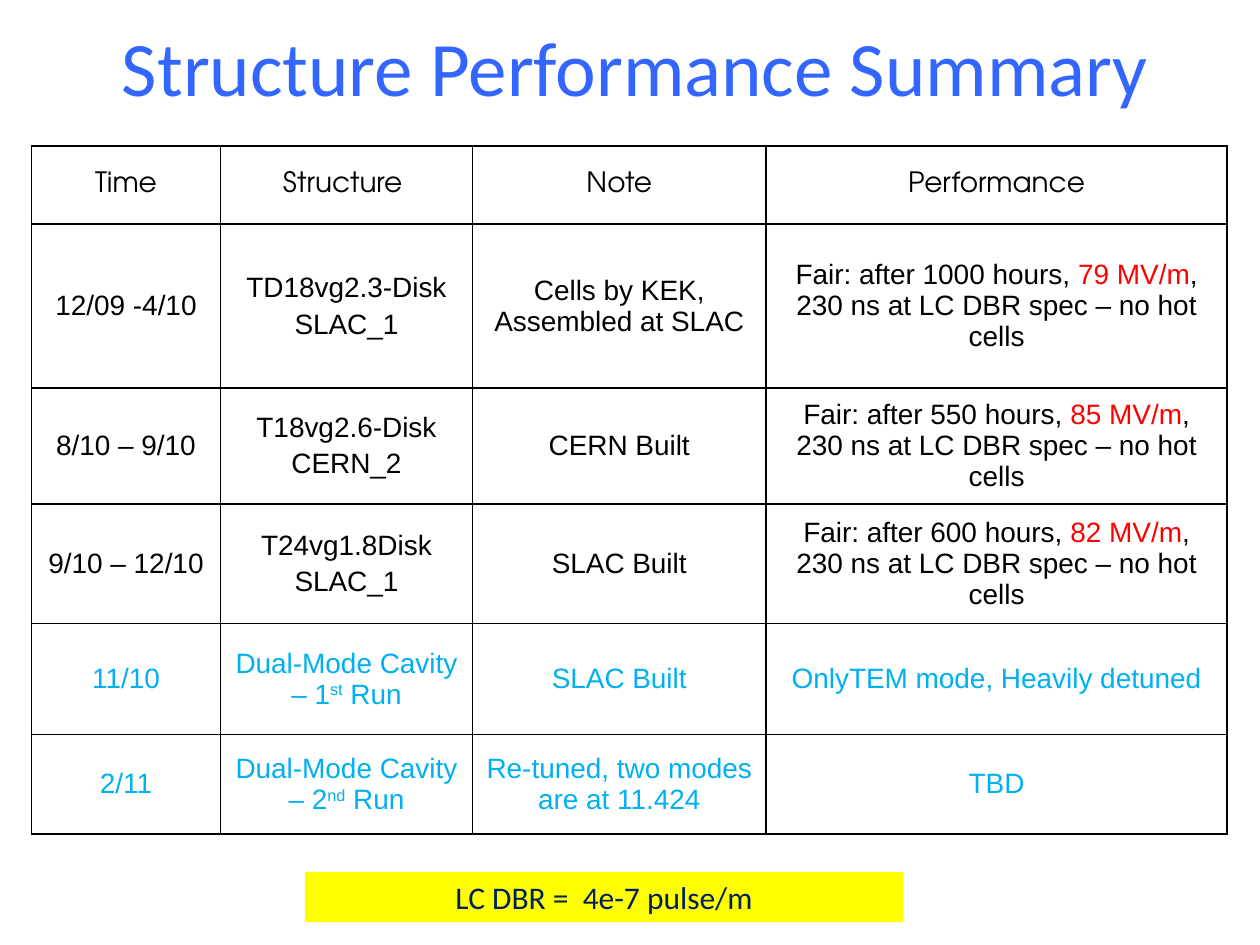
"""Build the structure performance summary slide."""
from dataclasses import dataclass

from lxml.etree import SubElement
from pptx import Presentation
from pptx.dml.color import RGBColor
from pptx.enum.shapes import MSO_SHAPE
from pptx.enum.text import MSO_ANCHOR, PP_ALIGN
from pptx.oxml.ns import qn
from pptx.util import Inches, Pt

BLACK = RGBColor(0x00, 0x00, 0x00)
RED = RGBColor(0xFF, 0x00, 0x00)
SKY = RGBColor(0x00, 0xB0, 0xF0)
BLUE = RGBColor(0x33, 0x66, 0xFF)
NAVY = RGBColor(0x00, 0x20, 0x60)
YELLOW = RGBColor(0xFF, 0xFF, 0x00)

COLUMN_WIDTHS = (1.5, 2, 2.33, 3.66)
BORDER_SIDES = ("a:lnL", "a:lnR", "a:lnT", "a:lnB")


@dataclass(frozen=True)
class Span:
    text: str
    color: RGBColor | None = None
    raised: bool = False


@dataclass(frozen=True)
class Row:
    height: float
    cells: tuple
    color: RGBColor = BLACK
    font: str = "Arial"


def fair(hours: int, gradient: int) -> tuple:
    return (
        Span(f"Fair: after {hours} hours, "),
        Span(f"{gradient} MV/m", RED),
        Span(", 230 ns at LC DBR spec – no hot cells"),
    )


def dual_mode(number: int, suffix: str) -> tuple:
    return (
        Span(f"Dual-Mode Cavity – {number}"),
        Span(suffix, raised=True),
        Span(" Run"),
    )


ROWS = (
    Row(0.62, ("Time", "Structure ", "Note", "Performance"), font="TeX Gyre Adventor"),
    Row(1.3, ("12/09 -4/10", "TD18vg2.3-Disk\nSLAC_1",
              "Cells by KEK, Assembled at SLAC", fair(1000, 79))),
    Row(0.92, ("8/10 – 9/10", "T18vg2.6-Disk\nCERN_2", "CERN Built", fair(550, 85))),
    Row(0.95, ("9/10 – 12/10", "T24vg1.8Disk\nSLAC_1", "SLAC Built", fair(600, 82))),
    Row(0.88, ("11/10", dual_mode(1, "st"), "SLAC Built",
               "OnlyTEM mode, Heavily detuned"), SKY),
    Row(0.79, ("2/11", dual_mode(2, "nd"), "Re-tuned, two modes are at 11.424",
               "TBD"), SKY),
)


def style_run(run, size: float, font: str, color: RGBColor) -> None:
    run.font.size = Pt(size)
    run.font.name = font
    run.font.color.rgb = color


def write_line(frame, text: str, size: float, font: str, color: RGBColor) -> None:
    frame.text = text
    frame.word_wrap = True
    para = frame.paragraphs[0]
    para.alignment = PP_ALIGN.CENTER
    style_run(para.runs[0], size, font, color)


def draw_borders(cell) -> None:
    properties = cell._tc.get_or_add_tcPr()
    for side in BORDER_SIDES:
        line = SubElement(properties, qn(side), w=str(Pt(1)))
        fill = SubElement(line, qn("a:solidFill"))
        SubElement(fill, qn("a:srgbClr"), val=str(BLACK))


def fill_cell(cell, content: str | tuple, row: Row) -> None:
    draw_borders(cell)
    cell.fill.background()
    cell.vertical_anchor = MSO_ANCHOR.MIDDLE
    frame = cell.text_frame
    if isinstance(content, str):
        frame.text = content
    else:
        for span in content:
            run = frame.paragraphs[0].add_run()
            run.text = span.text
            if span.raised:
                run.font._element.set("baseline", "30000")
    for para in frame.paragraphs:
        para.alignment = PP_ALIGN.CENTER
        para.space_before = Pt(3.2)
        for run in para.runs:
            style_run(run, 16, row.font, row.color)
    if not isinstance(content, str):
        for run, span in zip(frame.paragraphs[0].runs, content):
            run.font.color.rgb = span.color or row.color


def draw_table(page) -> None:
    frame = page.shapes.add_table(
        len(ROWS), len(COLUMN_WIDTHS), Inches(0.25), Inches(1.16),
        Inches(sum(COLUMN_WIDTHS)), Inches(sum(row.height for row in ROWS)),
    )
    table = frame.table
    table.first_row = False
    table.horz_banding = False
    for column, width in zip(table.columns, COLUMN_WIDTHS):
        column.width = Inches(width)
    for table_row, row in zip(table.rows, ROWS):
        table_row.height = Inches(row.height)
        for cell, content in zip(table_row.cells, row.cells):
            fill_cell(cell, content, row)


def draw_title(page) -> None:
    title = page.shapes.add_textbox(Inches(0.3), Inches(0.08), Inches(9.49), Inches(0.89))
    title.text_frame.vertical_anchor = MSO_ANCHOR.MIDDLE
    write_line(title.text_frame, "Structure Performance Summary", 44, "Calibri", BLUE)


def draw_rate_note(page) -> None:
    note = page.shapes.add_shape(
        MSO_SHAPE.RECTANGLE, Inches(2.42), Inches(6.92), Inches(4.75), Inches(0.4)
    )
    note.shadow.inherit = False
    note.fill.solid()
    note.fill.fore_color.rgb = YELLOW
    note.line.fill.background()
    note.text_frame.vertical_anchor = MSO_ANCHOR.TOP
    write_line(note.text_frame, "LC DBR =  4e-7 pulse/m", 18, "Calibri", NAVY)


def main() -> None:
    deck = Presentation()
    deck.slide_width = Inches(10)
    deck.slide_height = Inches(7.5)
    page = deck.slides.add_slide(deck.slide_layouts[6])
    draw_table(page)
    draw_title(page)
    draw_rate_note(page)
    deck.save("out.pptx")


if __name__ == "__main__":
    main()
